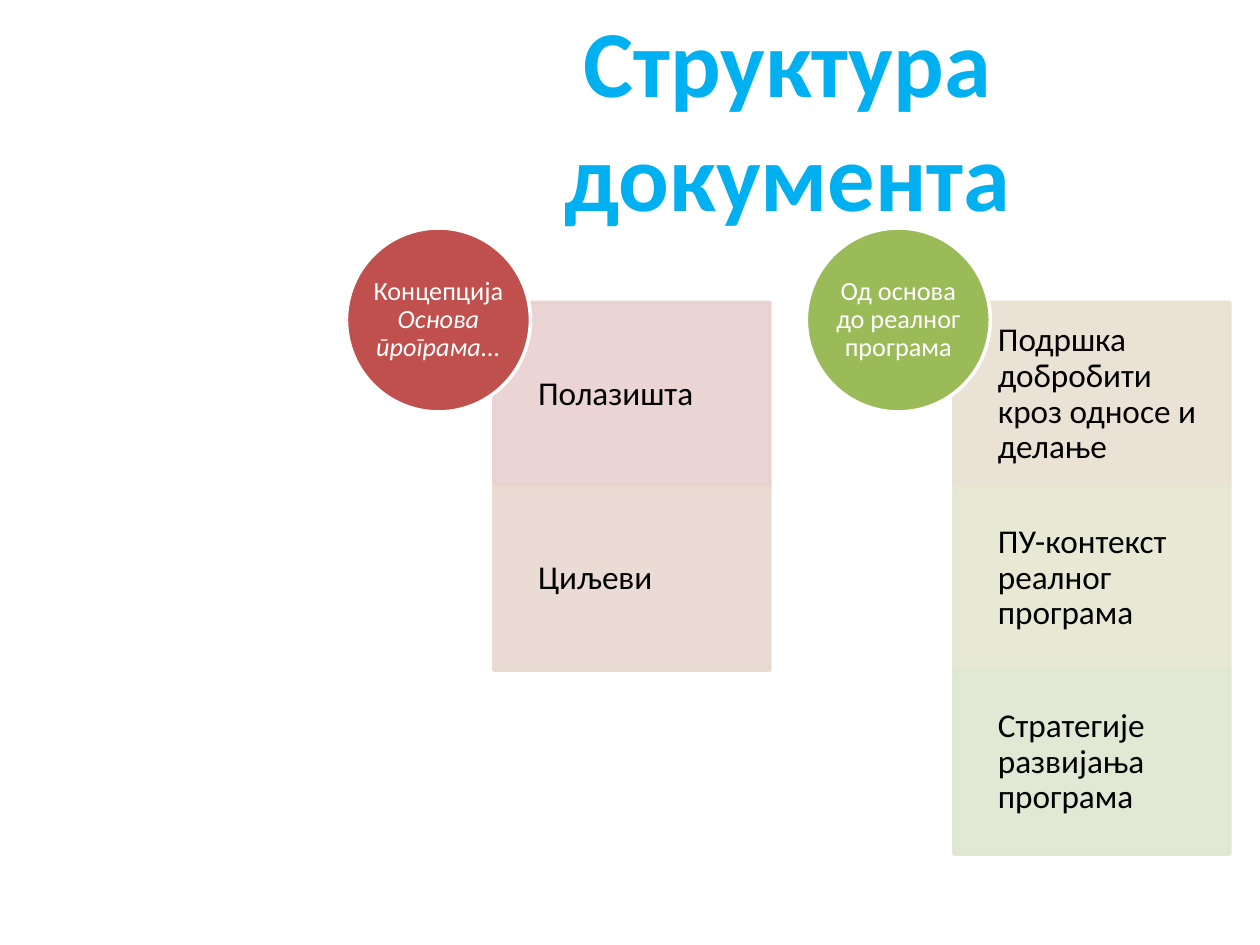
from lxml import etree
from pptx import Presentation
from pptx.dml.color import RGBColor
from pptx.enum.lang import MSO_LANGUAGE_ID
from pptx.enum.shapes import MSO_SHAPE
from pptx.enum.text import MSO_ANCHOR, MSO_AUTO_SIZE, PP_ALIGN
from pptx.oxml.ns import qn
from pptx.util import Inches, Pt

RECT, OVAL = MSO_SHAPE.RECTANGLE, MSO_SHAPE.OVAL
LEFT, CENTER = PP_ALIGN.LEFT, PP_ALIGN.CENTER
MIDDLE = MSO_ANCHOR.MIDDLE
NO_FIT = MSO_AUTO_SIZE.NONE
SERBIAN = MSO_LANGUAGE_ID.SERBIAN_CYRILLIC

SKY = RGBColor(0x00, 0xB0, 0xF0)
BLACK = RGBColor(0x00, 0x00, 0x00)
WHITE = RGBColor(0xFF, 0xFF, 0xFF)
RED = RGBColor(0xC0, 0x50, 0x4D)
GREEN = RGBColor(0x9B, 0xBB, 0x59)
PINK = RGBColor(0xE8, 0xD0, 0xD0)
PEACH = RGBColor(0xE8, 0xD9, 0xD0)
SAND = RGBColor(0xE8, 0xE1, 0xD1)
LIME = RGBColor(0xE6, 0xE7, 0xD1)
MINT = RGBColor(0xDE, 0xE7, 0xD1)

CELL = 1.46
CELL_W = 2.19
CELL_DX = 1.17
CELL_DY = 0.59
PITCH = 3.65

GROUPS = [
    (RED, [("Концепција ", False), ("Oснова програма...", True)],
     [("Полазишта", PINK), ("Циљеви", PEACH)]),
    (GREEN, [("Од основа до реалног програма", False)],
     [("Подршка добробити кроз односе и делање", SAND),
      ("ПУ-контекст реалног програма", LIME),
      ("Стратегије развијања програма", MINT)]),
]


def set_attrs(obj, values):
    """Set each named attribute of an object."""
    for name, value in values.items():
        setattr(obj, name, value)


def write(s, runs, size, color, align, margins, spacing=0.9, bold=False):
    """Write (text, italic) runs into a shape as one paragraph."""
    tf = s.text_frame
    sides = ("margin_left", "margin_top", "margin_right", "margin_bottom")
    set_attrs(tf, {"word_wrap": True, "auto_size": NO_FIT, "vertical_anchor": MIDDLE})
    set_attrs(tf, {side: Inches(m) for side, m in zip(sides, margins)})
    p = tf.paragraphs[0]
    set_attrs(p, {"alignment": align, "line_spacing": spacing})
    for text, italic in runs:
        r = p.add_run()
        r.text = text
        r.font.color.rgb = color
        set_attrs(r.font, {"name": "Calibri", "size": Pt(size), "bold": bold,
                           "italic": italic, "language_id": SERBIAN})


def add_block(slide, kind, box, fill, line, alpha=100):
    """Add a filled and outlined shape in a box given in inches."""
    s = slide.shapes.add_shape(kind, *map(Inches, box))
    s.shadow.inherit = False
    s.fill.solid()
    s.fill.fore_color.rgb = fill
    s.line.color.rgb = line
    s.line.width = Pt(2)
    if alpha < 100:
        for clr in s._element.spPr.iter(qn("a:srgbClr")):
            etree.SubElement(clr, qn("a:alpha"), val=str(alpha * 1000))
    return s


def add_title(slide, box):
    """Place and format the title placeholder."""
    s = slide.shapes.title
    set_attrs(s, dict(zip(("left", "top", "width", "height"), map(Inches, box))))
    write(s, [("Структура документа", False)], 54, SKY, CENTER,
          (0.1, 0.05, 0.1, 0.05), spacing=1.0, bold=True)


def add_group(slide, left, top, color, heading, items):
    """Add a column of cells with a heading circle over its top left corner."""
    for i, (text, fill) in enumerate(items):
        box = (left + CELL_DX, top + CELL_DY + i * CELL, CELL_W, CELL)
        s = add_block(slide, RECT, box, fill, fill, alpha=90)
        write(s, [(text, False)], 19, BLACK, LEFT, (0.35, 0.15, 0.15, 0.15))
    s = add_block(slide, OVAL, (left, top, CELL, CELL), color, WHITE)
    write(s, heading, 15, WHITE, CENTER, (0, 0, 0, 0))


def main():
    """Build and save the slide."""
    prs = Presentation()
    prs.slide_width, prs.slide_height = Inches(10), Inches(7.5)
    slide = prs.slides.add_slide(prs.slide_layouts[5])
    add_title(slide, (2.75, 0.3, 7, 1.25))
    for i, group in enumerate(GROUPS):
        add_group(slide, 2.75 + i * PITCH, 1.81, *group)
    prs.save("out.pptx")


if __name__ == "__main__":
    main()
